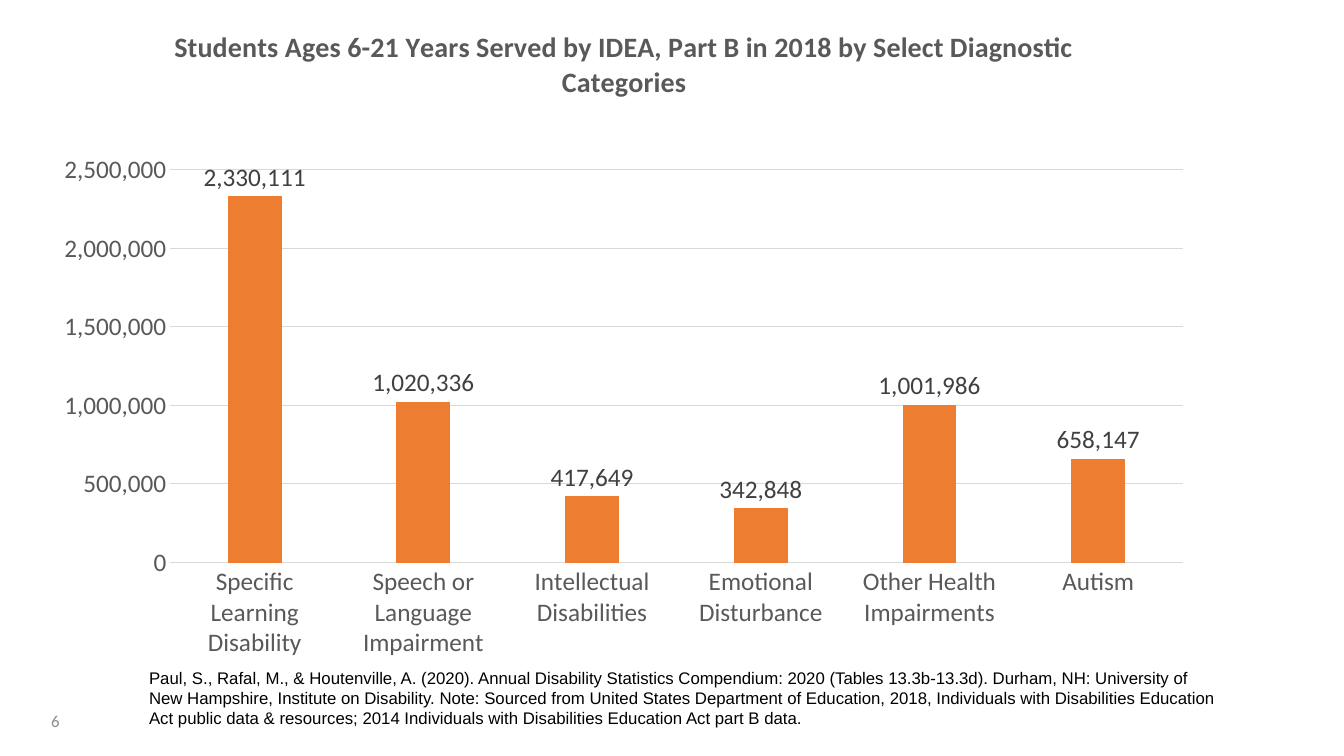
from pptx import Presentation
from pptx.chart.data import CategoryChartData
from pptx.dml.color import RGBColor
from pptx.enum.chart import XL_CHART_TYPE, XL_LABEL_POSITION, XL_TICK_MARK
from pptx.enum.text import MSO_ANCHOR, PP_ALIGN
from pptx.oxml import parse_xml
from pptx.oxml.ns import nsdecls, qn
from pptx.util import Inches, Pt

BLACK = RGBColor(0x00, 0x00, 0x00)
DARK = RGBColor(0x40, 0x40, 0x40)
GRAY = RGBColor(0x59, 0x59, 0x59)
MID = RGBColor(0x8C, 0x8C, 0x8C)
LIGHT = RGBColor(0xD9, 0xD9, 0xD9)
ORANGE = RGBColor(0xED, 0x7D, 0x31)

TITLE = ("Students Ages 6-21 Years Served by IDEA, Part B in 2018 "
         "by Select Diagnostic Categories")
STUDENTS = {
    "Specific Learning Disability": 2330111,
    "Speech or Language Impairment": 1020336,
    "Intellectual Disabilities": 417649,
    "Emotional Disturbance": 342848,
    "Other Health Impairments": 1001986,
    "Autism": 658147,
}
SOURCE = (
    "Paul, S., Rafal, M., & Houtenville, A. (2020). Annual Disability "
    "Statistics Compendium: 2020 (Tables 13.3b-13.3d). Durham, NH: University "
    "of New Hampshire, Institute on Disability. Note: Sourced from United "
    "States Department of Education, 2018, Individuals with Disabilities "
    "Education Act public data & resources; 2014 Individuals with Disabilities "
    "Education Act part B data."
)
NUMBER_FORMAT = "#,##0"


def set_font(font, size, color, name="Calibri", bold=False):
    font.name = name
    font.size = Pt(size)
    font.bold = bold
    font.color.rgb = color


def set_line(line, color):
    line.color.rgb = color
    line.width = Pt(0.75)


def place_plot(chart, x, y, w, h):
    area = chart._chartSpace.chart.plotArea
    for old in area.findall(qn("c:layout")):
        area.remove(old)
    area.insert(0, parse_xml(
        f'<c:layout {nsdecls("c")}><c:manualLayout>'
        '<c:layoutTarget val="inner"/>'
        '<c:xMode val="edge"/><c:yMode val="edge"/>'
        f'<c:x val="{x}"/><c:y val="{y}"/><c:w val="{w}"/><c:h val="{h}"/>'
        '</c:manualLayout></c:layout>'))


def add_student_chart(slide, left, top, width, height):
    data = CategoryChartData(number_format=NUMBER_FORMAT)
    data.categories = list(STUDENTS)
    data.add_series("Series 1", list(STUDENTS.values()))
    chart = slide.shapes.add_chart(
        XL_CHART_TYPE.COLUMN_CLUSTERED, Inches(left), Inches(top),
        Inches(width), Inches(height), data).chart
    set_font(chart.font, 10, BLACK)
    chart.has_legend = False
    chart.has_title = True
    r = chart.chart_title.text_frame.paragraphs[0].add_run()
    r.text = TITLE
    set_font(r.font, 20, GRAY, bold=True)
    chart.chart_title.include_in_layout = False
    place_plot(chart, 0.11, 0.25, 0.87, 0.59)

    for axis in (chart.category_axis, chart.value_axis):
        axis.major_tick_mark = axis.minor_tick_mark = XL_TICK_MARK.NONE
        set_font(axis.tick_labels.font, 18, GRAY)
    set_line(chart.category_axis.format.line, LIGHT)
    values = chart.value_axis
    values.minimum_scale, values.maximum_scale = 0, 2500000
    values.major_unit = 500000
    values.tick_labels.number_format = NUMBER_FORMAT
    values.tick_labels.number_format_is_linked = False
    values.format.line.fill.background()
    set_line(values.major_gridlines.format.line, LIGHT)

    plot = chart.plots[0]
    plot.vary_by_categories = False
    plot.gap_width = 219
    plot.overlap = -27
    bars = plot.series[0]
    bars.format.fill.solid()
    bars.format.fill.fore_color.rgb = ORANGE
    set_line(bars.format.line, ORANGE)
    labels = bars.data_labels
    labels.show_value = True
    labels.position = XL_LABEL_POSITION.OUTSIDE_END
    labels.number_format = NUMBER_FORMAT
    labels.number_format_is_linked = False
    set_font(labels.font, 18, DARK)


def add_text(slide, left, top, width, height, text, color, name,
             align=PP_ALIGN.LEFT, anchor=MSO_ANCHOR.TOP):
    sp = slide.shapes.add_textbox(
        Inches(left), Inches(top), Inches(width), Inches(height))
    tf = sp.text_frame
    tf.word_wrap = True
    tf.vertical_anchor = anchor
    p = tf.paragraphs[0]
    p.alignment = align
    r = p.add_run()
    r.text = text
    set_font(r.font, 12, color, name)


def main():
    prs = Presentation()
    prs.slide_width = Inches(13.33)
    prs.slide_height = Inches(7.5)
    s = prs.slides.add_slide(prs.slide_layouts[6])
    add_text(s, 0.15, 6.95, 0.54, 0.4, "6", MID, "Calibri",
             PP_ALIGN.RIGHT, MSO_ANCHOR.MIDDLE)
    add_student_chart(s, 0.42, 0.03, 11.54, 6.61)
    add_text(s, 1.38, 6.57, 10.88, 0.71, SOURCE, BLACK, "Arial")
    prs.save("out.pptx")


if __name__ == "__main__":
    main()
